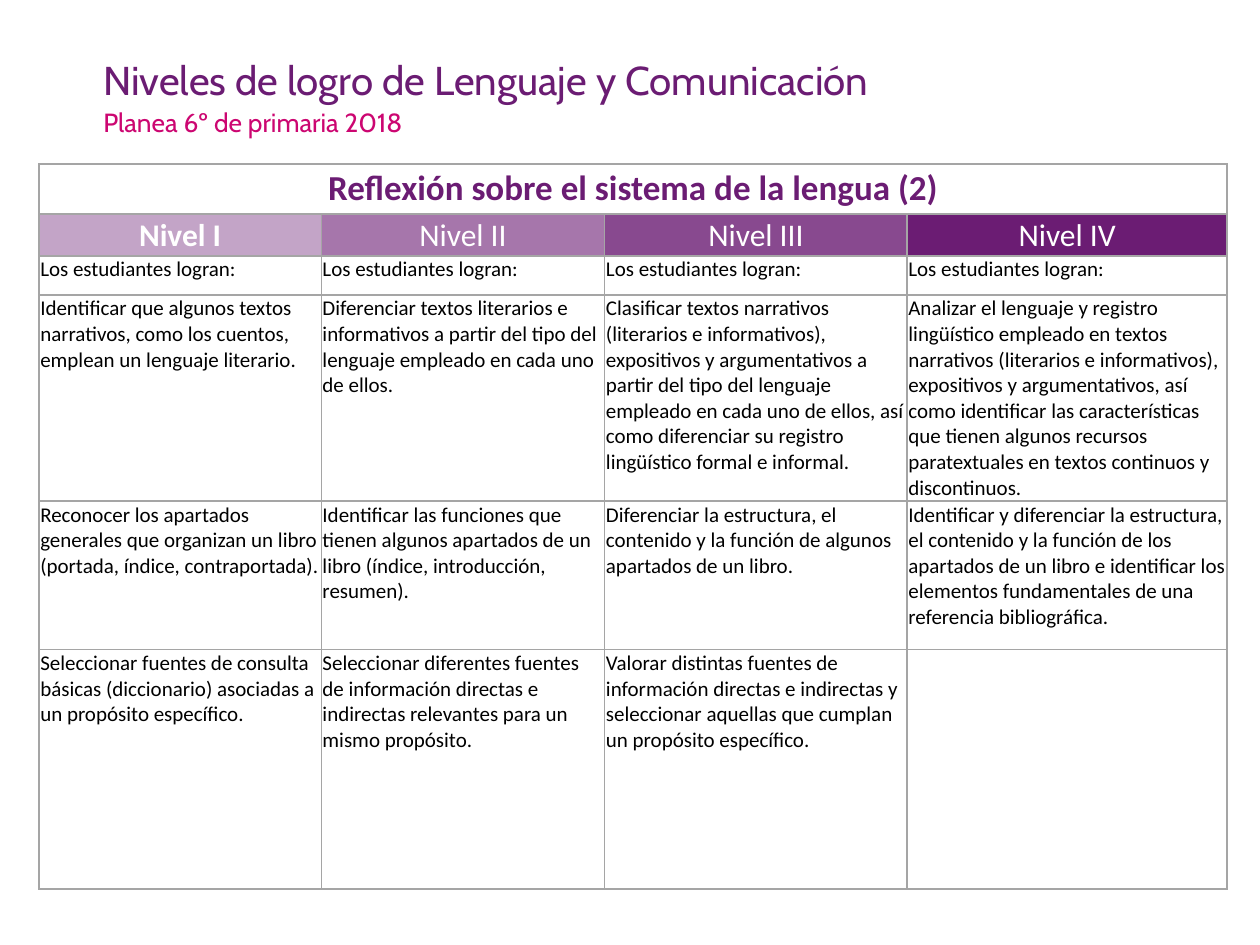
"""Build the slide of reading achievement levels as a four-column table."""
from lxml import etree
from pptx import Presentation
from pptx import util as u
from pptx.dml import color
from pptx.enum import text
from pptx.oxml import ns

PLUM, PINK, GREY, WHITE, BLACK = "6B1C73", "CC0671", "A5A5A5", "FFFFFF", "000000"
WIDTHS = [2.24, 2.25, 2.4, 2.54]
HEIGHTS = [0.4, 0.33, 0.31, 1.63, 1.18, 1.9]
LEVELS = [("Nivel I", 40), ("Nivel II", 60), ("Nivel III", 80), ("Nivel IV", 100)]
SKILLS = [
    ["Los estudiantes logran:"] * 4,
    ["Identificar que algunos textos narrativos, como los cuentos, emplean un lenguaje literario.",
     "Diferenciar textos literarios e informativos a partir del tipo del lenguaje empleado en cada "
     "uno de ellos.",
     "Clasificar textos narrativos (literarios e informativos), expositivos y argumentativos a "
     "partir del tipo del lenguaje empleado en cada uno de ellos, así como diferenciar su registro "
     "lingüístico formal e informal.",
     "Analizar el lenguaje y registro lingüístico empleado en textos narrativos (literarios e "
     "informativos), expositivos y argumentativos, así como identificar las características que "
     "tienen algunos recursos paratextuales en textos continuos y discontinuos."],
    ["Reconocer los apartados generales que organizan un libro (portada, índice, contraportada).",
     "Identificar las funciones que tienen algunos apartados de un libro (índice, introducción, "
     "resumen).",
     "Diferenciar la estructura, el contenido y la función de algunos apartados de un libro.",
     "Identificar y diferenciar la estructura, el contenido y la función de los apartados de un "
     "libro e identificar los elementos fundamentales de una referencia bibliográfica."],
    ["Seleccionar fuentes de consulta básicas (diccionario) asociadas a un propósito específico.",
     "Seleccionar diferentes fuentes de información directas e indirectas relevantes para un "
     "mismo propósito.",
     "Valorar distintas fuentes de información directas e indirectas y seleccionar aquellas que "
     "cumplan un propósito específico.",
     ""],
]


def rgb(code):
    """Turn a hex string into a colour."""
    return color.RGBColor.from_string(code)


class Deck:
    """Hold the style and the current slide."""

    head, body = "Cabin", "Calibri"

    def __init__(self):
        """Open a blank deck with one title slide."""
        self.prs = Presentation()
        self.prs.slide_width, self.prs.slide_height = u.Inches(10), u.Inches(7.5)
        self.slide = self.prs.slides.add_slide(self.prs.slide_layouts[0])

    def put(self, frame, words, font, size, ink, bold=False, align="LEFT", gap=1.0):
        """Put one styled paragraph in a frame."""
        frame.text = words
        para = frame.paragraphs[0]
        para.alignment = getattr(text.PP_ALIGN, align)
        para.line_spacing = gap
        for run in para.runs:
            run.font.name, run.font.size, run.font.bold = font, u.Pt(size), bold
            run.font.color.rgb = rgb(ink)

    def holder(self, index, box, words, size, ink, gap):
        """Move and fill a placeholder."""
        shape = self.slide.placeholders[index]
        shape.left, shape.top, shape.width, shape.height = map(u.Inches, box)
        frame = shape.text_frame
        frame.word_wrap = True
        frame.auto_size = text.MSO_AUTO_SIZE.NONE
        frame.vertical_anchor = text.MSO_ANCHOR.TOP
        self.put(frame, words, self.head, size, ink, gap=gap)

    def table(self, left, top, widths, heights):
        """Add a plain table with ruled white cells."""
        box = [u.Inches(n) for n in (left, top, sum(widths), sum(heights))]
        grid = self.slide.shapes.add_table(len(heights), len(widths), *box).table
        grid.first_row = grid.horz_banding = False
        for col, width in zip(grid.columns, widths):
            col.width = u.Inches(width)
        for row, height in zip(grid.rows, heights):
            row.height = u.Inches(height)
        for cell in grid.iter_cells():
            self.paint(cell, WHITE)
            self.rule(cell)
        return grid

    def paint(self, cell, tint, alpha=100):
        """Fill a cell, with opacity in percent."""
        cell.fill.solid()
        cell.fill.fore_color.rgb = rgb(tint)
        if alpha < 100:
            tone = cell._tc.tcPr.find(ns.qn("a:solidFill"))[0]
            etree.SubElement(tone, ns.qn("a:alpha"), val=str(alpha * 1000))

    def rule(self, cell):
        """Draw the four borders of a cell."""
        for place, side in enumerate("LRTB"):
            line = etree.Element(ns.qn("a:ln" + side), w=str(u.Pt(1)))
            fill = etree.SubElement(line, ns.qn("a:solidFill"))
            etree.SubElement(fill, ns.qn("a:srgbClr"), val=GREY)
            cell._tc.tcPr.insert(place, line)

    def label(self, cell, words, size, ink, bold):
        """Put a centred heading in a cell."""
        cell.margin_left = cell.margin_right = u.Inches(0.05)
        cell.margin_top = cell.margin_bottom = 0
        self.put(cell.text_frame, words, self.body, size, ink, bold, "CENTER", 1.07)

    def entry(self, cell, words):
        """Put body text in a cell."""
        cell.margin_left = cell.margin_right = cell.margin_top = u.Inches(0.01)
        cell.margin_bottom = 0
        self.put(cell.text_frame, words, self.body, 12, BLACK)


def main():
    """Build and save the deck."""
    deck = Deck()
    deck.holder(0, (0.72, 0.43, 8.62, 0.57), "Niveles de logro de Lenguaje y Comunicación",
                23, PLUM, 0.9)
    deck.holder(1, (0.72, 0.74, 8.62, 0.78), "Planea 6º de primaria 2018", 15, PINK, 1.2)
    grid = deck.table(0.31, 1.3, WIDTHS, HEIGHTS)
    grid.cell(0, 0).merge(grid.cell(0, 3))
    deck.label(grid.cell(0, 0), "Reflexión sobre el sistema de la lengua (2)", 20, PLUM, True)
    for col, (name, alpha) in enumerate(LEVELS):
        cell = grid.cell(1, col)
        deck.paint(cell, PLUM, alpha)
        deck.label(cell, name, 18, WHITE, col == 0)
    for row, skills in enumerate(SKILLS, 2):
        for col, words in enumerate(skills):
            deck.entry(grid.cell(row, col), words)
    deck.prs.save("out.pptx")


if __name__ == "__main__":
    main()
